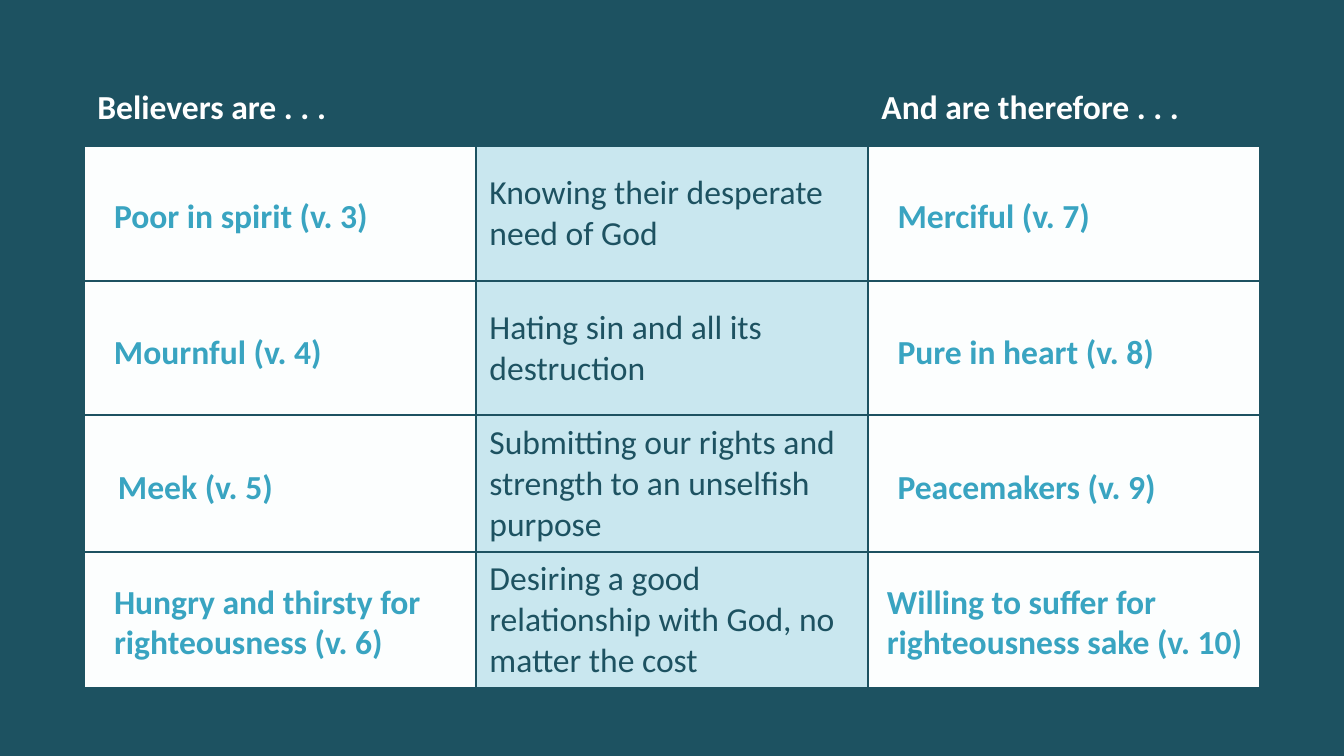
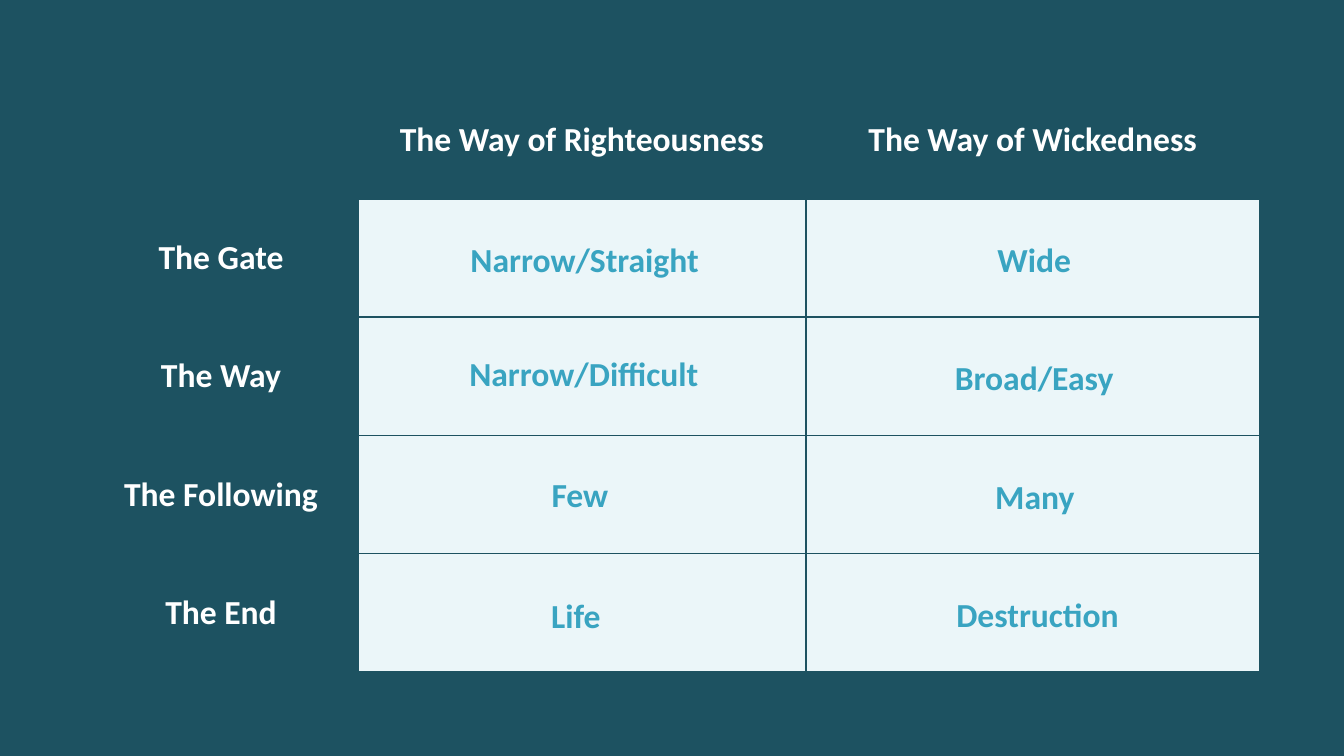
"""Builds two comparison tables with answer labels laid over their cells."""
import pptx
import pptx.util
import pptx.dml.color
import pptx.enum.text
import pptx.oxml
import pptx.oxml.ns

Inches = pptx.util.Inches
RGB = pptx.dml.color.RGBColor.from_string
ALIGN = pptx.enum.text.PP_ALIGN
COLORS = {
    "back": "1D5261",
    "white": "FFFFFF",
    "answer": "39A4C1",
    "paper": "FCFEFE",
    "middle": "C9E7EF",
    "pale": "EBF6F9",
}
FONT = "Calibri"
SLIDE_W = 10
TABLE_W = 8.75


def add_text(tf, text, color, align, bold=True):
    p = tf.paragraphs[0]
    p.alignment = align
    r = p.add_run()
    r.text = text
    r.font.name = FONT
    r.font.size = pptx.util.Pt(18)
    r.font.bold = bold
    r.font.color.rgb = RGB(COLORS[color])


def add_grid(s, top, widths, heights, fills):
    frame = s.shapes.add_table(
        len(heights), len(widths), Inches((SLIDE_W - TABLE_W) / 2), Inches(top),
        Inches(TABLE_W), Inches(sum(heights)))
    table = frame.table
    table.first_row = False
    table.horz_banding = False
    for column, width in zip(table.columns, widths):
        column.width = Inches(width)
    for i, height in enumerate(heights):
        table.rows[i].height = Inches(height)
        for j, fill in enumerate(fills):
            cell = table.cell(i, j)
            cell.vertical_anchor = pptx.enum.text.MSO_ANCHOR.MIDDLE
            tc_pr = cell._tc.get_or_add_tcPr()
            for side in ("lnL", "lnR", "lnT", "lnB"):
                tc_pr.append(pptx.oxml.parse_xml(
                    f'<a:{side} {pptx.oxml.ns.nsdecls("a")} w="12700"><a:solidFill>'
                    f'<a:srgbClr val="{COLORS["back"]}"/></a:solidFill></a:{side}>'))
            if i == 0:
                cell.fill.background()
            else:
                cell.fill.solid()
                cell.fill.fore_color.rgb = RGB(COLORS[fill])
    return table


prs = pptx.Presentation()
prs.slide_width = Inches(SLIDE_W)
prs.slide_height = Inches(SLIDE_W * 9 / 16)
slides = []
for _ in range(2):
    s = prs.slides.add_slide(prs.slide_layouts[6])
    s.background.fill.solid()
    s.background.fill.fore_color.rgb = RGB(COLORS["back"])
    slides.append(s)

table = add_grid(slides[0], 0.52, [TABLE_W / 3] * 3, [0.57] + [1] * 4,
                 ["paper", "middle", "paper"])
table.cell(0, 0).merge(table.cell(0, 1))
for j, heading in ((0, "Believers are . . ."), (2, "And are therefore . . .")):
    add_text(table.cell(0, j).text_frame, heading, "white", ALIGN.LEFT)
meanings = [
    "Knowing their desperate need of God",
    "Hating sin and all its destruction",
    "Submitting our rights and strength to an unselfish purpose",
    "Desiring a good relationship with God, no matter the cost",
]
for i, meaning in enumerate(meanings, 1):
    add_text(table.cell(i, 1).text_frame, meaning, "back", ALIGN.LEFT, bold=False)

table = add_grid(slides[1], 0.6, [2.04, 3.33, 3.38], [0.88] * 5,
                 ["back", "pale", "pale"])
for j, heading in enumerate(["The Way of Righteousness", "The Way of Wickedness"], 1):
    add_text(table.cell(0, j).text_frame, heading, "white", ALIGN.CENTER)
for i, topic in enumerate(["The Gate", "The Way", "The Following", "The End"], 1):
    add_text(table.cell(i, 0).text_frame, topic, "white", ALIGN.CENTER)

beatitudes = [
    ("Poor in spirit (v. 3)", 0.75, 1.4, 2.11, 0.4),
    ("Mournful (v. 4)", 0.75, 2.41, 1.76, 0.4),
    ("Meek (v. 5)", 0.78, 3.42, 1.37, 0.4),
    ("Hungry and thirsty for righteousness (v. 6)", 0.75, 4.27, 2.58, 0.71),
    ("Merciful (v. 7)", 6.58, 1.4, 1.65, 0.4),
    ("Pure in heart (v. 8)", 6.58, 2.41, 2.13, 0.4),
    ("Peacemakers (v. 9)", 6.58, 3.42, 2.14, 0.4),
    ("Willing to suffer for righteousness sake (v. 10)", 6.5, 4.27, 2.88, 0.71),
]
ways = [
    ("Narrow/Straight", 3.39, 1.73, 1.92, 0.4),
    ("Narrow/Difficult", 3.38, 2.58, 1.93, 0.4),
    ("Few", 4, 3.48, 0.63, 0.4),
    ("Life", 4, 4.38, 0.57, 0.4),
    ("Wide", 7.32, 1.73, 0.75, 0.4),
    ("Broad/Easy", 7, 2.61, 1.39, 0.4),
    ("Many", 7.3, 3.49, 0.8, 0.4),
    ("Destruction", 7.01, 4.37, 1.42, 0.4),
]
for s, answers, align in zip(slides, (beatitudes, ways), (ALIGN.LEFT, ALIGN.CENTER)):
    for text, left, top, width, height in answers:
        sp = s.shapes.add_textbox(Inches(left), Inches(top), Inches(width), Inches(height))
        tf = sp.text_frame
        tf.word_wrap = height > 0.4
        tf.auto_size = pptx.enum.text.MSO_AUTO_SIZE.SHAPE_TO_FIT_TEXT
        add_text(tf, text, "answer", align)

prs.save("out.pptx")
